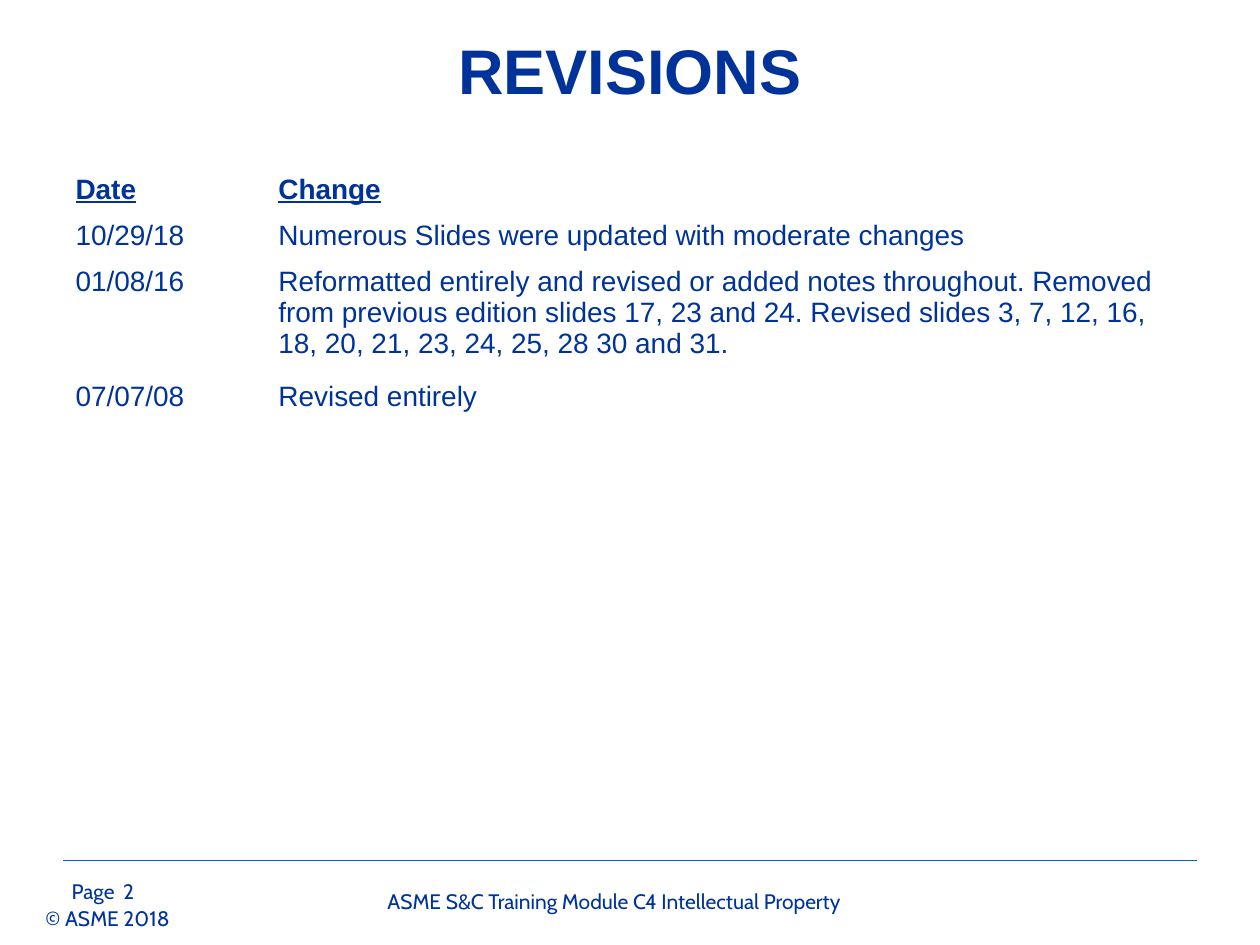
"""Build the revisions slide with its change table and footer."""
from pptx import Presentation
from pptx.dml.color import RGBColor as RGB
from pptx.enum.shapes import MSO_CONNECTOR as CONN
from pptx.enum.text import MSO_ANCHOR as ANCHOR, PP_ALIGN as ALIGN
from pptx.oxml.ns import qn
from pptx.util import Inches, Pt

NAVY = "003399"


def style(p, size, name, bold=False, underline=False):
    """Format every run of a paragraph."""
    for r in p.runs:
        f = r.font
        f.size, f.name, f.bold, f.underline = Pt(size), name, bold, underline
        f.color.rgb = RGB.from_string(NAVY)


def add_text(s, box, text, size, name, bold=False, align=ALIGN.LEFT):
    """Add a text box holding one line."""
    tf = s.shapes.add_textbox(*map(Inches, box)).text_frame
    tf.word_wrap = True
    tf.text = text
    tf.paragraphs[0].alignment = align
    style(tf.paragraphs[0], size, name, bold)
    return tf


prs = Presentation()
prs.slide_width, prs.slide_height = Inches(10), Inches(7.5)
s = prs.slides.add_slide(prs.slide_layouts[6])

rule = s.shapes.add_connector(CONN.STRAIGHT, Inches(0.5), Inches(6.83), Inches(9.5), Inches(6.83))
rule.line.color.rgb = RGB.from_string("0066CC")
rule.line.width = Pt(0.75)
sp_pr = rule._element.spPr
sp_pr.append(sp_pr.makeelement(qn("a:effectLst"), {}))

add_text(s, (0.47, 6.92, 0.77, 0.26), "Page", 12, "Cabin")
tf = add_text(s, (0.36, 7.19, 1.04, 0.2), "© ASME 2018", 12, "Cabin")
tf.margin_left = tf.margin_right = tf.margin_top = tf.margin_bottom = 0
tf.word_wrap = False
add_text(s, (1.54, 7, 6.67, 0.26), "ASME S&C Training Module C4 Intellectual Property",
         12, "Cabin", align=ALIGN.CENTER)
add_text(s, (0.88, 6.92, 0.47, 0.23), "2", 12, "Cabin")

rows = [
    ("Date", "Change"),
    ("10/29/18", "Numerous Slides were updated with moderate changes"),
    ("01/08/16", "Reformatted entirely and revised or added notes throughout. "
                 "Removed from previous edition slides 17, 23 and 24. Revised slides "
                 "3, 7, 12, 16, 18, 20, 21, 23, 24, 25, 28 30 and 31."),
    ("07/07/08", "Revised entirely"),
]
widths, heights = (1.61, 7.39), (0.36, 0.36, 0.91, 0.55)
table = s.shapes.add_table(len(rows), len(widths), Inches(0.5), Inches(1.33),
                           Inches(sum(widths)), Inches(sum(heights))).table
for col, width in zip(table.columns, widths):
    col.width = Inches(width)
for i, (row, height) in enumerate(zip(table.rows, heights)):
    row.height = Inches(height)
    for cell, text in zip(row.cells, rows[i]):
        cell.fill.solid()
        cell.fill.fore_color.rgb = RGB.from_string("FFFFFF")
        cell.text = text
        style(cell.text_frame.paragraphs[0], 16, "Arial", i == 0, i == 0)

tf = add_text(s, (1, 0.3, 8, 0.5), "REVISIONS", 36, "Arial", True, ALIGN.CENTER)
tf.vertical_anchor = ANCHOR.MIDDLE

prs.save("out.pptx")
